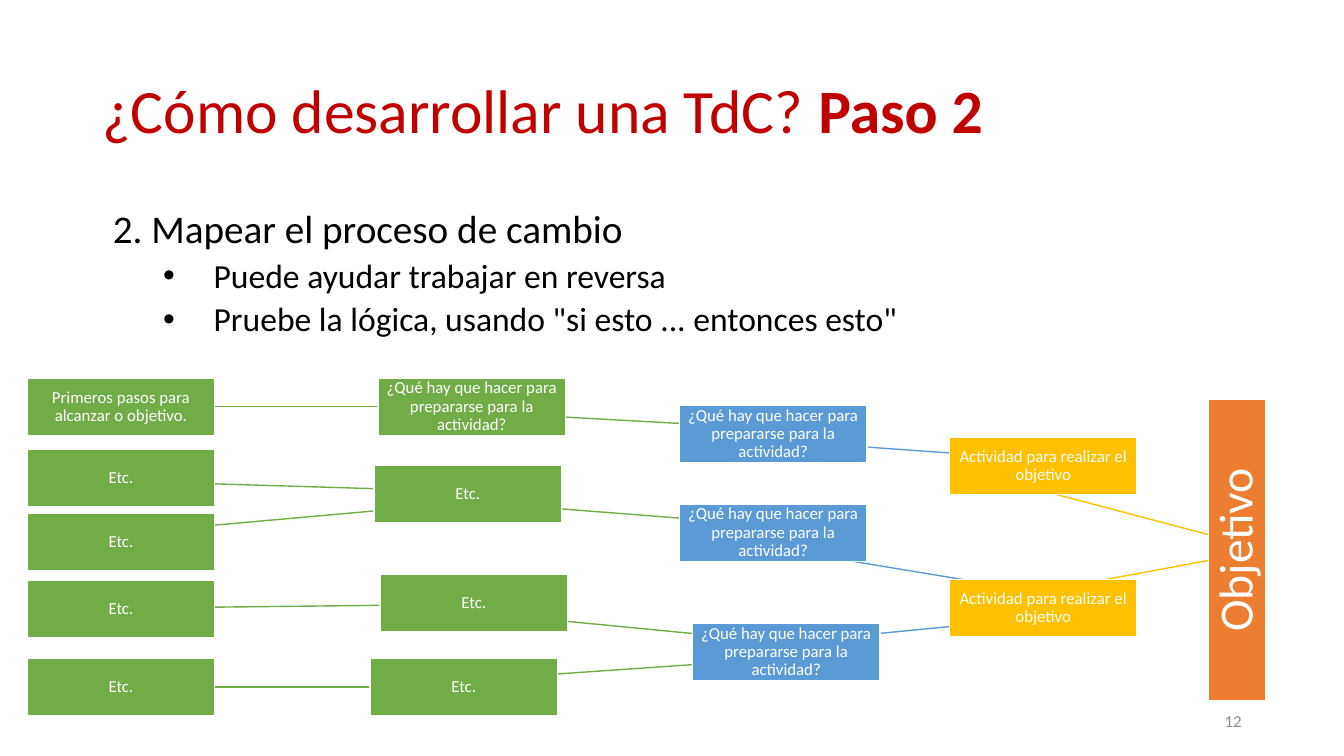
from lxml.etree import SubElement
from pptx import Presentation
from pptx.dml.color import RGBColor
from pptx.enum.shapes import MSO_CONNECTOR, MSO_SHAPE
from pptx.enum.text import MSO_ANCHOR, MSO_AUTO_SIZE, PP_ALIGN
from pptx.oxml.ns import qn
from pptx.util import Pt

HUES = {
    "title": "C00000", "text": "000000", "page": "8C8C8C", "white": "FFFFFF",
    "green": "70AD47", "blue": "5B9BD5", "gold": "FFC000", "orange": "ED7D31",
}
HUES = {name: RGBColor.from_string(code) for name, code in HUES.items()}


def style(item, **values):
    for name, value in values.items():
        setattr(item, name, value)


def write(para, text, size, hue, bold=False):
    """Add a run of Calibri text to a paragraph."""
    run = para.add_run()
    run.text = text
    style(run.font, name="Calibri", size=Pt(size), bold=bold)
    run.font.color.rgb = HUES[hue]


deck = Presentation()
style(deck, slide_width=Pt(960), slide_height=Pt(540))
slide = deck.slides.add_slide(deck.slide_layouts[1])
shapes = slide.shapes

# Title
title = shapes.title
style(title, left=Pt(66), top=Pt(28.8), width=Pt(828), height=Pt(104.4))
style(title.text_frame, vertical_anchor=MSO_ANCHOR.MIDDLE,
      auto_size=MSO_AUTO_SIZE.NONE)
para = title.text_frame.paragraphs[0]
style(para, alignment=PP_ALIGN.LEFT, line_spacing=0.9)
write(para, "¿Cómo desarrollar una TdC? ", 44, "title")
write(para, "Paso 2", 44, "title", True)

# Step and its hints: text, level, size, space before, margin, indent
body = slide.placeholders[1]
style(body, left=Pt(19.4), top=Pt(146.2), width=Pt(932.4), height=Pt(100))
style(body.text_frame, vertical_anchor=MSO_ANCHOR.TOP,
      auto_size=MSO_AUTO_SIZE.NONE)
LINES = [
    ("2. Mapear el proceso de cambio", 0, 28, 10, 54, 0),
    ("Puede ayudar trabajar en reversa", 1, 24, 5, 126, -36),
    ('Pruebe la lógica, usando "si esto ... entonces esto"', 1, 24, 5, 126, -36),
]
for row, (text, level, size, gap, margin, indent) in enumerate(LINES):
    para = body.text_frame.add_paragraph() if row else body.text_frame.paragraphs[0]
    style(para, level=level, line_spacing=0.9, space_before=Pt(gap))
    write(para, text, size, "text")
    props = para._p.get_or_add_pPr()
    props.set("marL", str(Pt(margin)))
    props.set("indent", str(Pt(indent)))
    if level:
        SubElement(props, qn("a:buFont"), typeface="Arial")
        SubElement(props, qn("a:buChar"), char="•")
    else:
        SubElement(props, qn("a:buNone"))

# Page number
page = shapes.add_textbox(Pt(678), Pt(500.4), Pt(216), Pt(28.8))
style(page.text_frame, word_wrap=True, vertical_anchor=MSO_ANCHOR.MIDDLE)
para = page.text_frame.paragraphs[0]
para.alignment = PP_ALIGN.RIGHT
write(para, "12", 12, "page")

# Change map: key, key of the box it leads to, left, top, hue, text
WIDE, HIGH, TALL = 134, 41, 215.3
GOAL = "Objetivo"
TASK = "Actividad para realizar el objetivo"
PREP = "¿Qué hay que hacer para prepararse para la actividad?"
FIRST = "Primeros pasos para alcanzar o objetivo."
STEPS = [
    ("goal", None, 863.3, 285.1, "orange", GOAL),
    ("task1", "goal", 678.2, 312.5, "gold", TASK),
    ("task2", "goal", 678.2, 414, "gold", TASK),
    ("prep1", "task1", 485.3, 289.4, "blue", PREP),
    ("prep2", "task2", 485.3, 360, "blue", PREP),
    ("prep3", "task2", 494.6, 445, "blue", PREP),
    ("mid1", "prep1", 270, 270, "green", PREP),
    ("mid2", "prep2", 267.1, 332.6, "green", "Etc."),
    ("mid3", "prep3", 271.4, 410.4, "green", "Etc."),
    ("mid4", "prep3", 264.2, 470.2, "green", "Etc."),
    ("start1", "mid1", 19.4, 270, "green", FIRST),
    ("start2", "mid2", 19.4, 321.1, "green", "Etc."),
    ("start3", "mid2", 19.4, 366.5, "green", "Etc."),
    ("start4", "mid3", 19.4, 414.7, "green", "Etc."),
    ("start5", "mid4", 19.4, 470.2, "green", "Etc."),
]
boxes = {}
for key, lead, left, top, hue, text in STEPS:
    goal = lead is None
    width, height = (HIGH, TALL) if goal else (WIDE, HIGH)
    box = shapes.add_shape(MSO_SHAPE.RECTANGLE, Pt(left), Pt(top),
                           Pt(width), Pt(height))
    boxes[key] = box
    box.shadow.inherit = False
    box.fill.solid()
    box.fill.fore_color.rgb = HUES[hue]
    box.line.color.rgb = HUES["white"]
    box.line.width = Pt(1)
    inset = Pt(1.5 if goal else 0.6)
    frame = box.text_frame
    style(frame, word_wrap=True, vertical_anchor=MSO_ANCHOR.MIDDLE,
          margin_left=inset, margin_right=inset,
          margin_top=inset, margin_bottom=inset)
    if goal:
        frame._txBody.bodyPr.set("vert", "vert270")
    para = frame.paragraphs[0]
    style(para, alignment=PP_ALIGN.CENTER, line_spacing=0.9)
    write(para, text, 34 if goal else 12, "white")

# Links run behind the boxes, from the far side of one to the far side of the next
for key, lead, left, top, hue, text in STEPS[1:]:
    link = shapes.add_connector(MSO_CONNECTOR.STRAIGHT, 0, 0, 0, 0)
    link.begin_connect(boxes[lead], 3)
    link.end_connect(boxes[key], 1)
    link.line.color.rgb = HUES[hue]
    link.line.width = Pt(1)
    SubElement(link.element.spPr, qn("a:effectLst"))
    boxes["goal"].element.addprevious(link.element)

deck.save("out.pptx")
